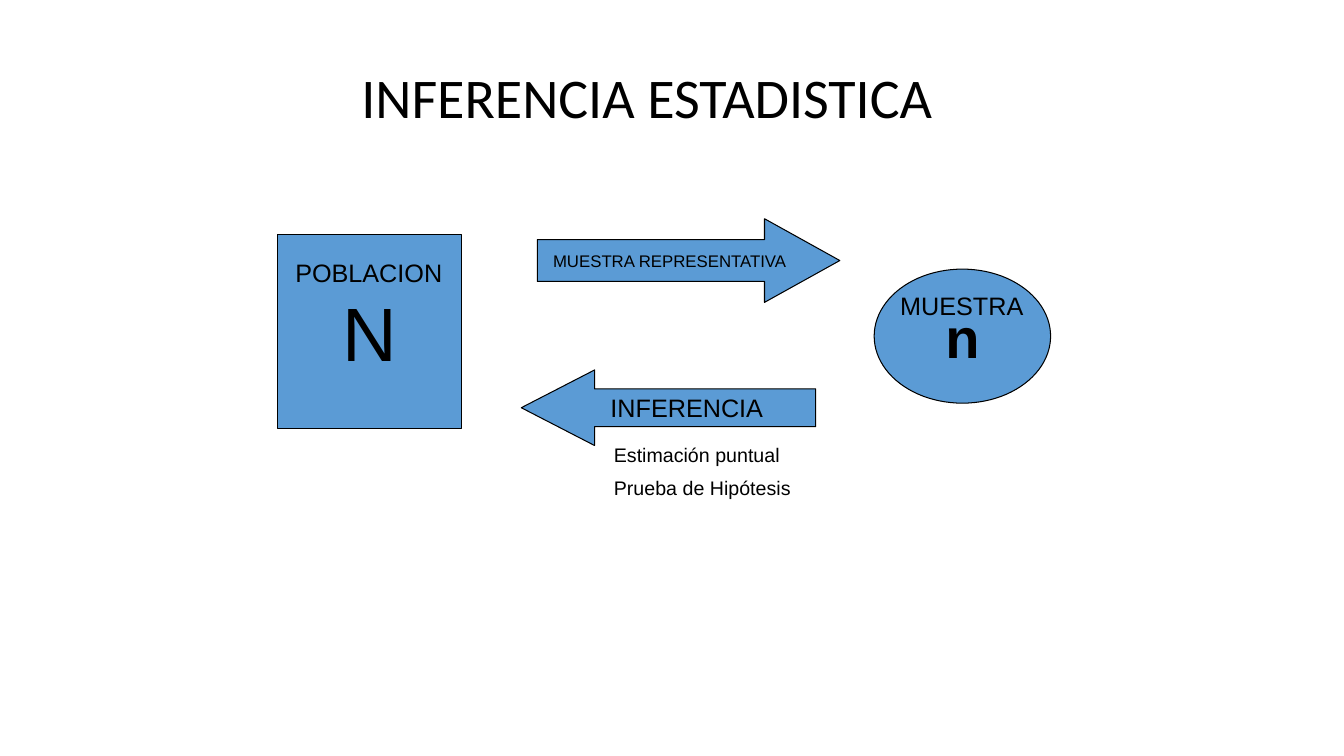
"""Builds a slide on statistical inference: population, sample and the arrows between them."""
from pptx import Presentation
from pptx.dml.color import RGBColor
from pptx.enum.shapes import MSO_SHAPE
from pptx.enum.text import MSO_ANCHOR, PP_ALIGN
from pptx.util import Inches, Pt

RECTANGLE, OVAL = MSO_SHAPE.RECTANGLE, MSO_SHAPE.OVAL
RIGHT_ARROW, LEFT_ARROW = MSO_SHAPE.RIGHT_ARROW, MSO_SHAPE.LEFT_ARROW
LEFT, CENTER = PP_ALIGN.LEFT, PP_ALIGN.CENTER
TOP, MIDDLE = MSO_ANCHOR.TOP, MSO_ANCHOR.MIDDLE

THEME = {
    "fill": RGBColor(0x5B, 0x9B, 0xD5),
    "ink": RGBColor(0, 0, 0),
    "body_font": "Arial",
    "title_font": "Calibri",
    "title": 40, "population": 54, "sample": 40,
    "label": 18, "note": 14, "small": 12,
    "outline": 0.75,
}

SHAPES = [
    (RECTANGLE, (2.75, 2.33, 1.83, 1.92), (), "N", "population", False),
    (OVAL, (8.67, 2.67, 1.75, 1.33), (), "n", "sample", True),
    (RIGHT_ARROW, (5.33, 2.17, 3, 0.83), (0.5, 0.9), "MUESTRA REPRESENTATIVA", "small", False),
    (LEFT_ARROW, (5.17, 3.67, 2.92, 0.75), (0.5, 0.97), "INFERENCIA", "label", False),
]

LABELS = [
    ((2.83, 2.5, 1.75, 0.4), ["POBLACION"], {"size": "label"}),
    ((8.83, 2.83, 1.75, 0.4), ["MUESTRA"], {"size": "label"}),
    ((5.99, 4.34, 2.1, 0.69), ["Estimación puntual", "Prueba de Hipótesis"], {"size": "note"}),
    ((1.2, 0.57, 10.43, 0.77), ["INFERENCIA ESTADISTICA"],
     {"size": "title", "font": "title_font", "align": CENTER}),
]


def write(box, lines, size, font="body_font", bold=False, align=LEFT, anchor=TOP, wrap=True):
    frame = box.text_frame
    frame.word_wrap = wrap
    frame.vertical_anchor = anchor
    for index, line in enumerate(lines):
        para = frame.add_paragraph() if index else frame.paragraphs[0]
        para.alignment = align
        if index:
            para.space_before = Pt(THEME[size] / 2)
        span = para.add_run()
        span.text = line
        span.font.name = THEME[font]
        span.font.size = Pt(THEME[size])
        span.font.bold = bold
        span.font.color.rgb = THEME["ink"]


def add_figure(page, kind, place, adjustments, text, size, bold):
    shape = page.shapes.add_shape(kind, *map(Inches, place))
    for index, value in enumerate(adjustments):
        shape.adjustments[index] = value
    shape.shadow.inherit = False
    shape.fill.solid()
    shape.fill.fore_color.rgb = THEME["fill"]
    shape.line.color.rgb = THEME["ink"]
    shape.line.width = Pt(THEME["outline"])
    write(shape, [text], size=size, bold=bold, align=CENTER, anchor=MIDDLE, wrap=False)


def main():
    deck = Presentation()
    deck.slide_width, deck.slide_height = Inches(13.33), Inches(7.5)
    page = deck.slides.add_slide(deck.slide_layouts[6])
    for figure in SHAPES:
        add_figure(page, *figure)
    for place, lines, style in LABELS:
        write(page.shapes.add_textbox(*map(Inches, place)), lines, **style)
    deck.save("out.pptx")


if __name__ == "__main__":
    main()
